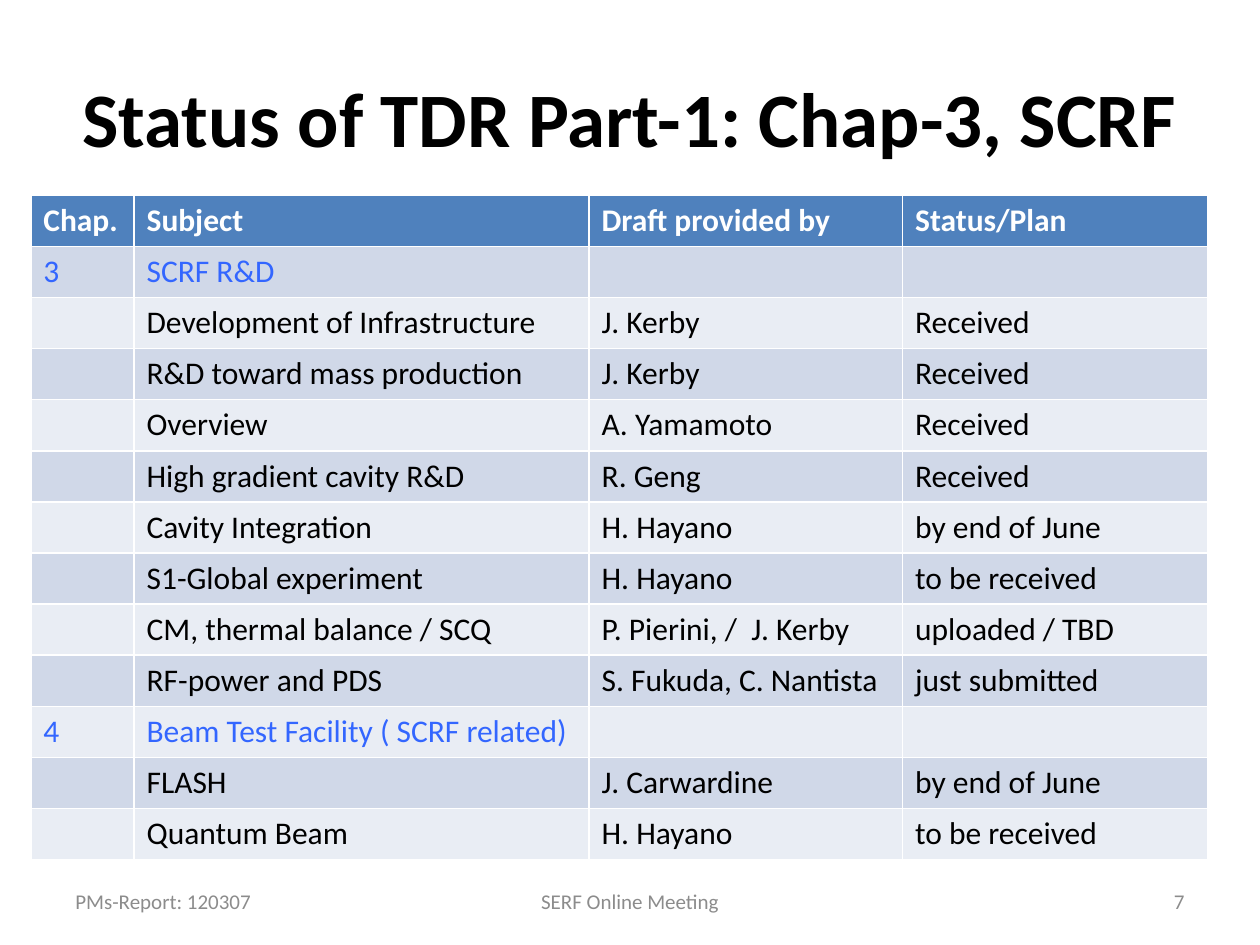
from typing import NamedTuple

from pptx import Presentation
from pptx.dml.color import RGBColor
from pptx.enum.text import MSO_ANCHOR, PP_ALIGN
from pptx.util import Pt

FONT = "Calibri"
BLACK, WHITE, GREY, BLUE = "000000", "FFFFFF", "8C8C8C", "3366FF"
HEADER_FILL = "4F81BD"
BAND_FILLS = ("E9EDF4", "D0D8E8")
COLUMN_WIDTHS = (59, 260, 179.2, 174.4)
ROW_HEIGHT = 29.2


class Label(NamedTuple):
    text: str
    left: float
    top: float
    width: float
    height: float
    align: PP_ALIGN
    size: float = 12
    color: str = GREY
    bold: bool = False


LABELS = (
    Label("Status of TDR Part-1: Chap-3, SCRF", 36, 21.6, 648, 90,
          PP_ALIGN.CENTER, 44, BLACK, True),
    Label("PMs-Report: 120307", 36, 500.4, 168, 28.8, PP_ALIGN.LEFT),
    Label("SERF Online Meeting", 246, 500.4, 228, 28.8, PP_ALIGN.CENTER),
    Label("7", 516, 500.4, 168, 28.8, PP_ALIGN.RIGHT),
)

ROWS = (
    ("Chap.", "Subject", "Draft provided by", "Status/Plan"),
    ("3", "SCRF R&D", "", ""),
    ("", "Development of Infrastructure", "J. Kerby", "Received"),
    ("", "R&D toward mass production", "J. Kerby", "Received"),
    ("", "Overview", "A. Yamamoto", "Received"),
    ("", "High gradient cavity R&D", "R. Geng", "Received"),
    ("", "Cavity Integration", "H. Hayano", "by end of June"),
    ("", "S1-Global experiment", "H. Hayano", "to be received"),
    ("", "CM, thermal balance / SCQ", "P. Pierini, /  J. Kerby", "uploaded / TBD"),
    ("", "RF-power and PDS", "S. Fukuda, C. Nantista", "just submitted"),
    ("4", "Beam Test Facility ( SCRF related)", "", ""),
    ("", "FLASH", "J. Carwardine", "by end of June"),
    ("", "Quantum Beam", "H. Hayano", "to be received"),
)


def rgb(value: str) -> RGBColor:
    return RGBColor.from_string(value)


def add_run(p, text: str, size: float, color: str, bold: bool) -> None:
    r = p.add_run()
    r.text = text
    r.font.name = FONT
    r.font.size = Pt(size)
    r.font.bold = bold
    r.font.color.rgb = rgb(color)


def add_label(s, label: Label) -> None:
    sp = s.shapes.add_textbox(Pt(label.left), Pt(label.top),
                              Pt(label.width), Pt(label.height))
    tf = sp.text_frame
    tf.word_wrap = True
    tf.vertical_anchor = MSO_ANCHOR.MIDDLE
    p = tf.paragraphs[0]
    p.alignment = label.align
    add_run(p, label.text, label.size, label.color, label.bold)


def add_status_table(s, left: float, top: float) -> None:
    """Draw the chapter table; its default style supplies the white borders."""
    table = s.shapes.add_table(
        len(ROWS), len(COLUMN_WIDTHS), Pt(left), Pt(top),
        Pt(sum(COLUMN_WIDTHS)), Pt(ROW_HEIGHT * len(ROWS))).table
    for column, width in zip(table.columns, COLUMN_WIDTHS):
        column.width = Pt(width)
    for i, texts in enumerate(ROWS):
        table.rows[i].height = Pt(ROW_HEIGHT)
        is_header = i == 0
        fill = HEADER_FILL if is_header else BAND_FILLS[i % 2]
        color = WHITE if is_header else BLUE if texts[0] else BLACK
        for cell, text in zip(table.rows[i].cells, texts):
            cell.fill.solid()
            cell.fill.fore_color.rgb = rgb(fill)
            if text:
                add_run(cell.text_frame.paragraphs[0], text, 18, color, is_header)


def main() -> None:
    prs = Presentation()
    prs.slide_width, prs.slide_height = Pt(720), Pt(540)
    s = prs.slides.add_slide(prs.slide_layouts[6])
    for label in LABELS:
        add_label(s, label)
    add_status_table(s, 17.6, 111.6)
    prs.save("out.pptx")


if __name__ == "__main__":
    main()
